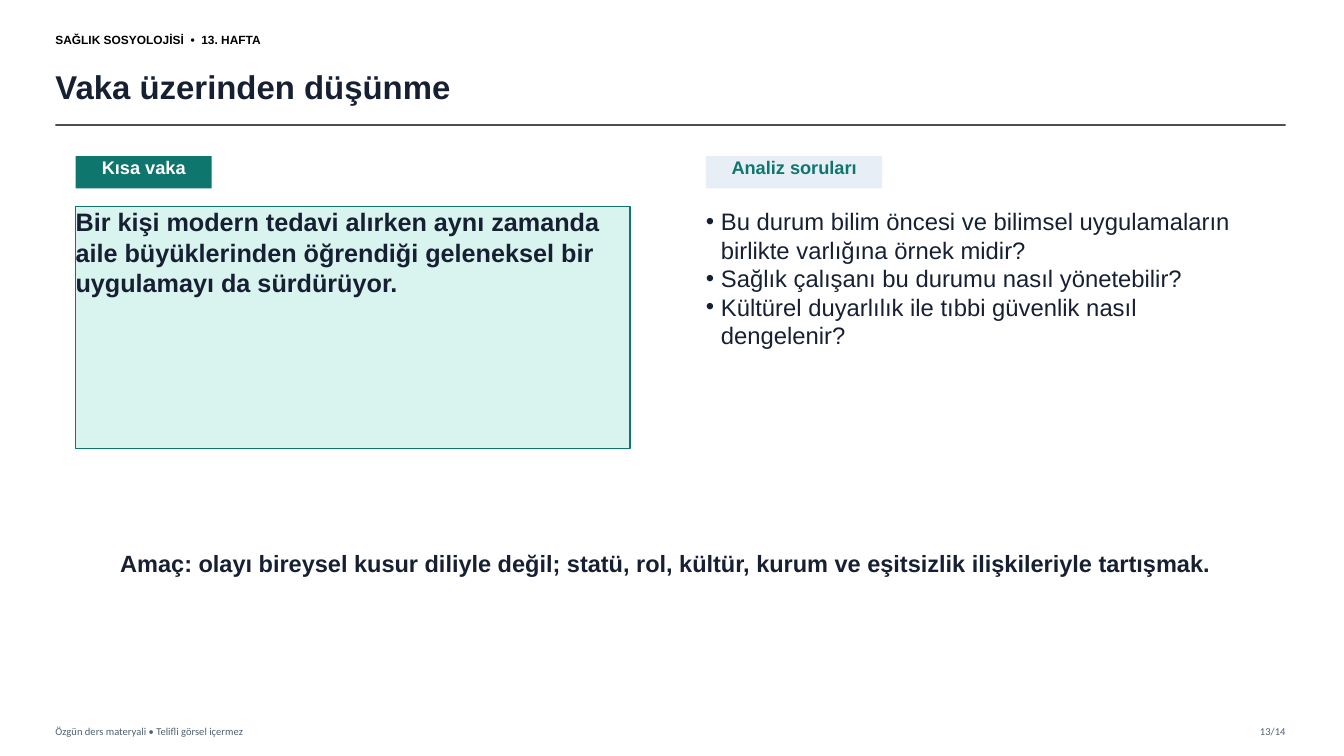
"""Build the case discussion slide of the health sociology course."""
from dataclasses import dataclass

import pptx
import pptx.dml.color
import pptx.enum.shapes
import pptx.enum.text
import pptx.oxml.ns
import pptx.util
from lxml import etree

Inches = pptx.util.Inches
Align = pptx.enum.text.PP_ALIGN
Anchor = pptx.enum.text.MSO_ANCHOR


@dataclass(frozen=True)
class Theme:
    """Colours, fonts and type sizes of the slide."""

    white: str = "FFFFFF"
    black: str = "000000"
    ink: str = "172033"
    teal: str = "0F766E"
    mint: str = "D9F3EE"
    mist: str = "E8EEF5"
    rule: str = "333333"
    footer: str = "506070"
    heading_font: str = "Arial"
    footer_font: str = "Calibri"
    title_size: float = 23.5
    case_size: float = 18
    question_size: float = 17
    aim_size: float = 16.8
    label_size: float = 13
    course_size: float = 8.5
    footer_size: float = 7.5


def rgb(value):
    """Return the colour object for a hexadecimal value."""
    return pptx.dml.color.RGBColor.from_string(value)


def add_element(parent, tag, **attributes):
    """Append a drawing element to a parent element."""
    return etree.SubElement(parent, pptx.oxml.ns.qn(tag), attributes)


class SlideBuilder:
    """Draw styled elements on the current slide."""

    def __init__(self, slide, theme):
        """Keep the slide and its theme."""
        self.slide = slide
        self.theme = theme

    def fill_text(self, shape, lines, size, color, bold=False, font=None,
                  align=Align.LEFT, anchor=Anchor.TOP, bullet_indent=None):
        """Fill a shape with one paragraph for each line."""
        frame = shape.text_frame
        frame.word_wrap = True
        frame.auto_size = pptx.enum.text.MSO_AUTO_SIZE.NONE
        frame.vertical_anchor = anchor
        frame.margin_left = frame.margin_right = 0
        frame.margin_top = frame.margin_bottom = 0
        for index, line in enumerate(lines):
            paragraph = frame.add_paragraph() if index else frame.paragraphs[0]
            if bullet_indent is not None:
                properties = paragraph._p.get_or_add_pPr()
                properties.set("marL", str(bullet_indent))
                properties.set("indent", str(-bullet_indent))
                add_element(properties, "a:buChar", char="•")
            paragraph.alignment = align
            paragraph.space_before = pptx.util.Pt(0)
            run = paragraph.add_run()
            run.text = line
            run.font.name = font or self.theme.heading_font
            run.font.size = pptx.util.Pt(size)
            run.font.bold = bold
            run.font.color.rgb = rgb(color)

    def placeholder(self, index, box, lines, size, **style):
        """Move a template placeholder and fill it."""
        shape = self.slide.placeholders[index]
        shape.left, shape.top, shape.width, shape.height = map(Inches, box)
        self.fill_text(shape, lines, size, self.theme.ink, **style)

    def text(self, box, line, size, color, **style):
        """Add a text box."""
        shape = self.slide.shapes.add_textbox(*map(Inches, box))
        self.fill_text(shape, [line], size, color, **style)

    def panel(self, box, line, size, color, fill, outline=None, **style):
        """Add a filled rectangle with bold text."""
        shape = self.slide.shapes.add_shape(
            pptx.enum.shapes.MSO_SHAPE.RECTANGLE, *map(Inches, box))
        shape.shadow.inherit = False
        shape.fill.solid()
        shape.fill.fore_color.rgb = rgb(fill)
        if outline:
            shape.line.color.rgb = rgb(outline)
            shape.line.width = pptx.util.Pt(1)
        else:
            shape.line.fill.background()
        self.fill_text(shape, [line], size, color, bold=True, **style)

    def label(self, left, width, line, color, fill):
        """Add the small heading above a column."""
        self.panel((left, 1.55, width, 0.32), line, self.theme.label_size,
                   color, fill, align=Align.CENTER)

    def rule(self, left, right, top):
        """Add the slightly transparent line under the title."""
        line = self.slide.shapes.add_connector(
            pptx.enum.shapes.MSO_CONNECTOR.STRAIGHT,
            Inches(left), Inches(top), Inches(right), Inches(top))
        line.line.color.rgb = rgb(self.theme.rule)
        line.line.width = pptx.util.Pt(1.2)
        properties = line._element.spPr
        color = properties.find(".//" + pptx.oxml.ns.qn("a:srgbClr"))
        add_element(color, "a:alpha", val="85000")
        add_element(properties, "a:effectLst")


def main():
    """Build and save the slide."""
    theme = Theme()
    presentation = pptx.Presentation()
    presentation.slide_width = Inches(13.33)
    presentation.slide_height = Inches(7.5)
    slide = presentation.slides.add_slide(presentation.slide_layouts[1])
    builder = SlideBuilder(slide, theme)

    margin_left, margin_right = 0.55, 12.75
    case_left, questions_left, content_top = 0.75, 7, 2.05

    builder.text((margin_left, 0.25, 3.6, 0.28),
                 "SAĞLIK SOSYOLOJİSİ  •  13. HAFTA", theme.course_size,
                 theme.black, bold=True, anchor=Anchor.MIDDLE)
    builder.placeholder(0, (margin_left, 0.58, 11.95, 0.55),
                        ["Vaka üzerinden düşünme"], theme.title_size,
                        bold=True, anchor=Anchor.MIDDLE)
    builder.rule(margin_left, margin_right, 1.24)

    builder.label(case_left, 1.35, "Kısa vaka", theme.white, theme.teal)
    builder.panel((case_left, content_top, 5.5, 2.4),
                  "Bir kişi modern tedavi alırken aynı zamanda aile "
                  "büyüklerinden öğrendiği geleneksel bir uygulamayı da "
                  "sürdürüyor.",
                  theme.case_size, theme.ink, theme.mint, outline=theme.teal)

    builder.label(questions_left, 1.75, "Analiz soruları", theme.teal, theme.mist)
    builder.placeholder(1, (questions_left, content_top, 5.4, 2.65), [
        "Bu durum bilim öncesi ve bilimsel uygulamaların birlikte "
        "varlığına örnek midir?",
        "Sağlık çalışanı bu durumu nasıl yönetebilir?",
        "Kültürel duyarlılık ile tıbbi güvenlik nasıl dengelenir?",
    ], theme.question_size, bullet_indent=Inches(0.15))

    builder.text((1.05, 5.45, 11.1, 0.6),
                 "Amaç: olayı bireysel kusur diliyle değil; statü, rol, kültür, "
                 "kurum ve eşitsizlik ilişkileriyle tartışmak.",
                 theme.aim_size, theme.ink, bold=True, align=Align.CENTER)

    page_width = 0.65
    for left, width, line, align in (
        (margin_left, 6, "Özgün ders materyali • Telifli görsel içermez", Align.LEFT),
        (margin_right - page_width, page_width, "13/14", Align.RIGHT),
    ):
        builder.text((left, 7.14, width, 0.22), line, theme.footer_size,
                     theme.footer, font=theme.footer_font, align=align,
                     anchor=Anchor.MIDDLE)

    presentation.save("out.pptx")


if __name__ == "__main__":
    main()
